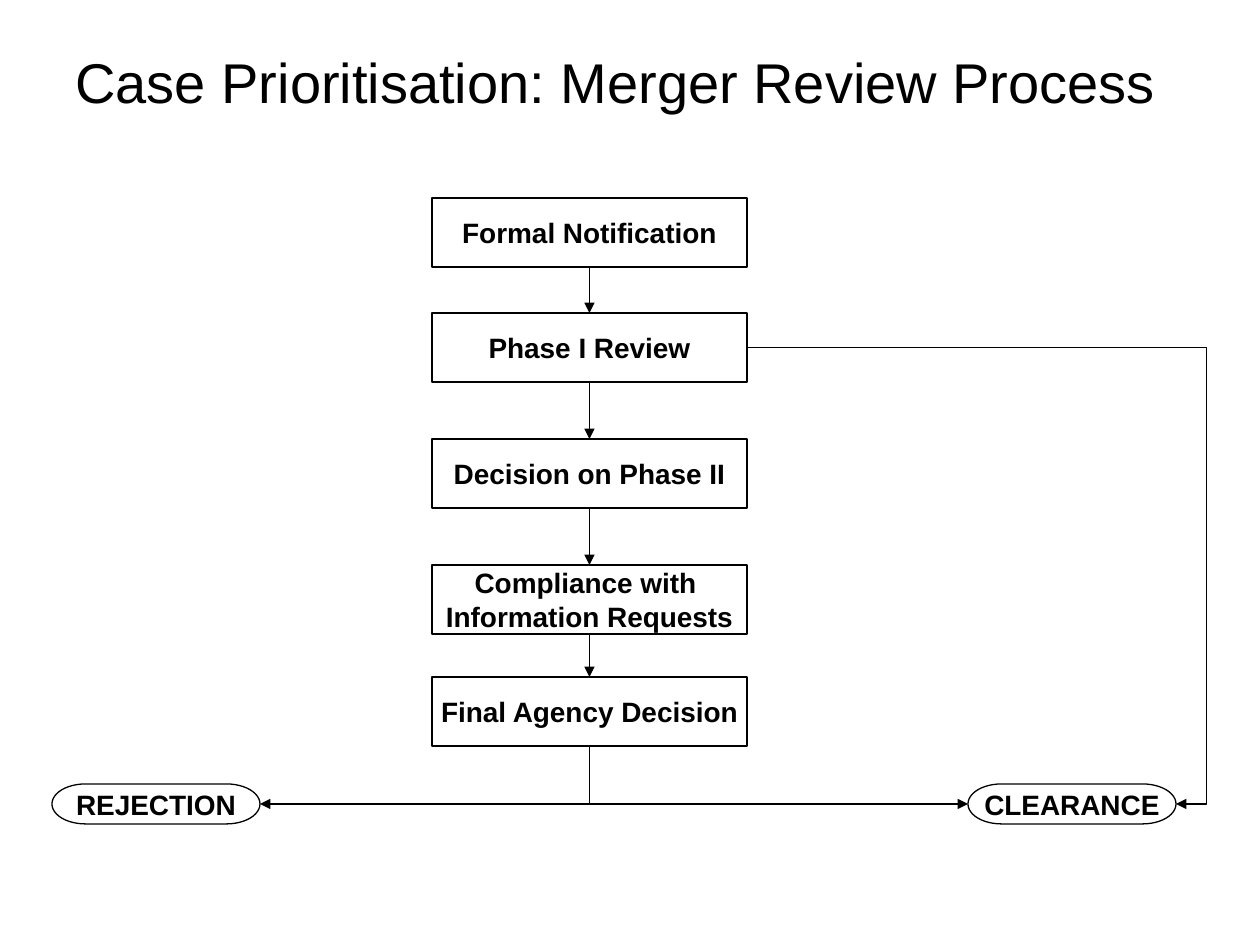
from lxml.etree import SubElement
from pptx import Presentation
from pptx.dml.color import RGBColor
from pptx.enum.shapes import MSO_CONNECTOR as Link, MSO_SHAPE as Shape
from pptx.enum.text import MSO_ANCHOR as Anchor, PP_ALIGN as Align
from pptx.oxml.ns import qn
from pptx.util import Pt

PX = 914400 / 126
BLACK = RGBColor(0, 0, 0)
WHITE = RGBColor(255, 255, 255)


def add_node(kind, text, *box):
    node = shapes.add_shape(kind, *(round(n * PX) for n in box))
    node.shadow.inherit = False
    node.fill.solid()
    node.fill.fore_color.rgb = WHITE
    node.line.color.rgb = BLACK
    node.line.width = Pt(0.75)
    frame = node.text_frame
    frame.word_wrap = False
    frame.vertical_anchor = Anchor.MIDDLE
    frame.text = text
    for para in frame.paragraphs:
        para.alignment = Align.CENTER
        para.font.name = "Arial"
        para.font.size = Pt(16)
        para.font.bold = True
        para.font.color.rgb = BLACK
    return node


def add_arrow(kind, *ends):
    arrow = shapes.add_connector(kind, *(round(n * PX) for n in ends))
    arrow.line.color.rgb = BLACK
    arrow.line.width = Pt(0.75)
    SubElement(arrow.line._get_or_add_ln(), qn("a:tailEnd"), type="triangle")
    SubElement(arrow._element.spPr, qn("a:effectLst"))
    return arrow


deck = Presentation()
deck.slide_width = round(1260 * PX)
deck.slide_height = round(945 * PX)
slide = deck.slides.add_slide(deck.slide_layouts[6])
shapes = slide.shapes

# Title
title = shapes.add_textbox(*(round(n * PX) for n in (63, 38, 1134, 87)))
frame = title.text_frame
frame.word_wrap = True
frame.vertical_anchor = Anchor.MIDDLE
frame.text = "Case Prioritisation: Merger Review Process"
font = frame.paragraphs[0].font
font.name = "Arial"
font.size = Pt(32)
font.color.rgb = BLACK

# Review steps, each joined to the one above
LEFT, WIDE, HIGH = 432, 315, 69
MID = LEFT + WIDE / 2
steps = [
    ("Formal Notification", 198),
    ("Phase I Review", 313),
    ("Decision on Phase II", 439),
    ("Compliance with \nInformation Requests", 565),
    ("Final Agency Decision", 677),
]
last = None
for text, top in steps:
    step = add_node(Shape.FLOWCHART_PROCESS, text, LEFT, top, WIDE, HIGH)
    if last:
        arrow = add_arrow(Link.STRAIGHT, MID, top - 40, MID, top)
        arrow.begin_connect(last, 2)
        arrow.end_connect(step, 0)
    last = step

# Outcomes
TOP, LONG, TALL = 784, 208, 40
END = TOP + TALL / 2
REJECT, CLEAR = 52, 968
for text, left in (("REJECTION", REJECT), ("CLEARANCE", CLEAR)):
    add_node(Shape.FLOWCHART_TERMINATOR, text, left, TOP, LONG, TALL)

# Final decision to each outcome: one bend, turned to leave downwards
base = steps[-1][1] + HIGH
drop = END - base
for goal, turn, flip in ((REJECT + LONG, 90, False), (CLEAR, 270, True)):
    span = abs(goal - MID)
    x = (MID + goal - drop) / 2
    y = (base + END - span) / 2
    arrow = add_arrow(Link.ELBOW, x, y, x + drop, y + span)
    props = arrow._element.spPr
    props.find(qn("a:prstGeom")).set("prst", "bentConnector2")
    frame = props.find(qn("a:xfrm"))
    frame.set("rot", str(turn * 60000))
    if flip:
        frame.set("flipH", "1")

# Phase I straight to clearance, around the right side
start, goal, bend = LEFT + WIDE, CLEAR + LONG, 1207
arrow = add_arrow(Link.ELBOW, start, steps[1][1] + HIGH / 2, goal, END)
ratio = round((bend - start) / (goal - start) * 100000)
guides = arrow._element.spPr.find(qn("a:prstGeom")).get_or_add_avLst()
SubElement(guides, qn("a:gd"), name="adj1", fmla=f"val {ratio}")

deck.save("out.pptx")
